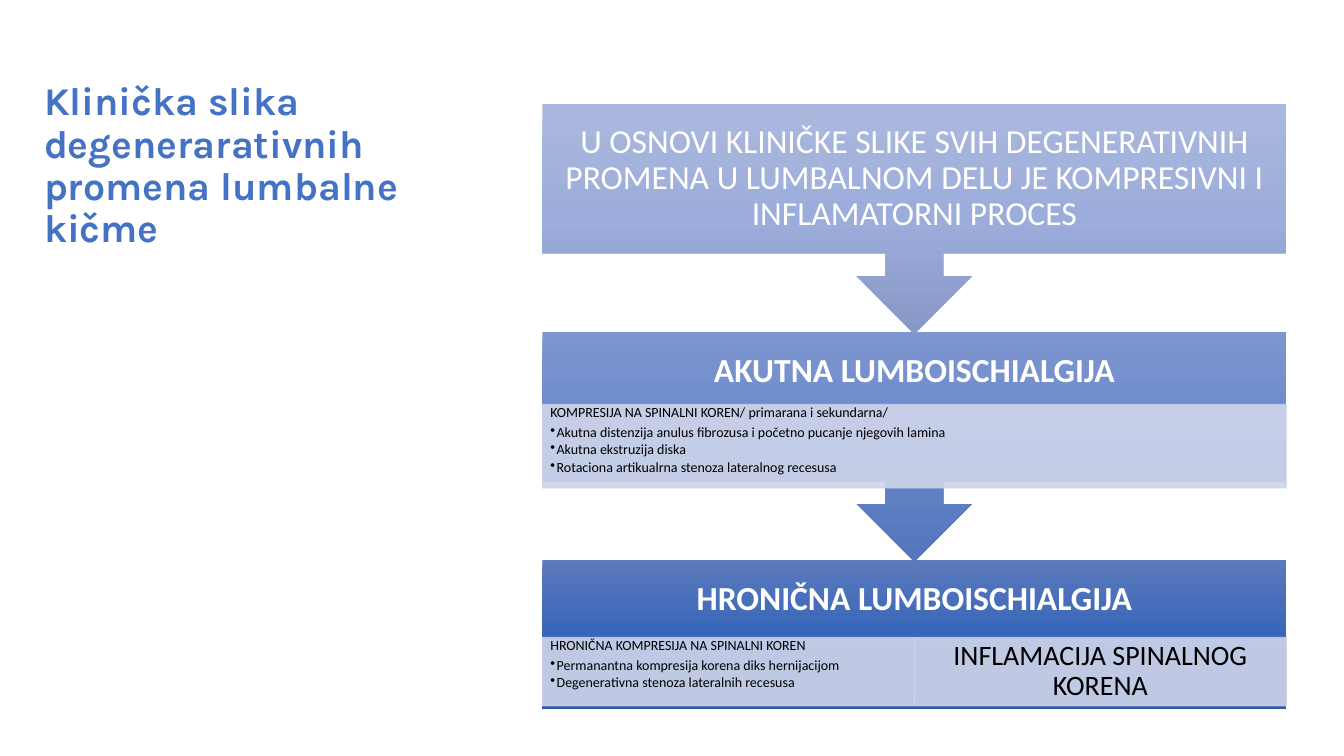
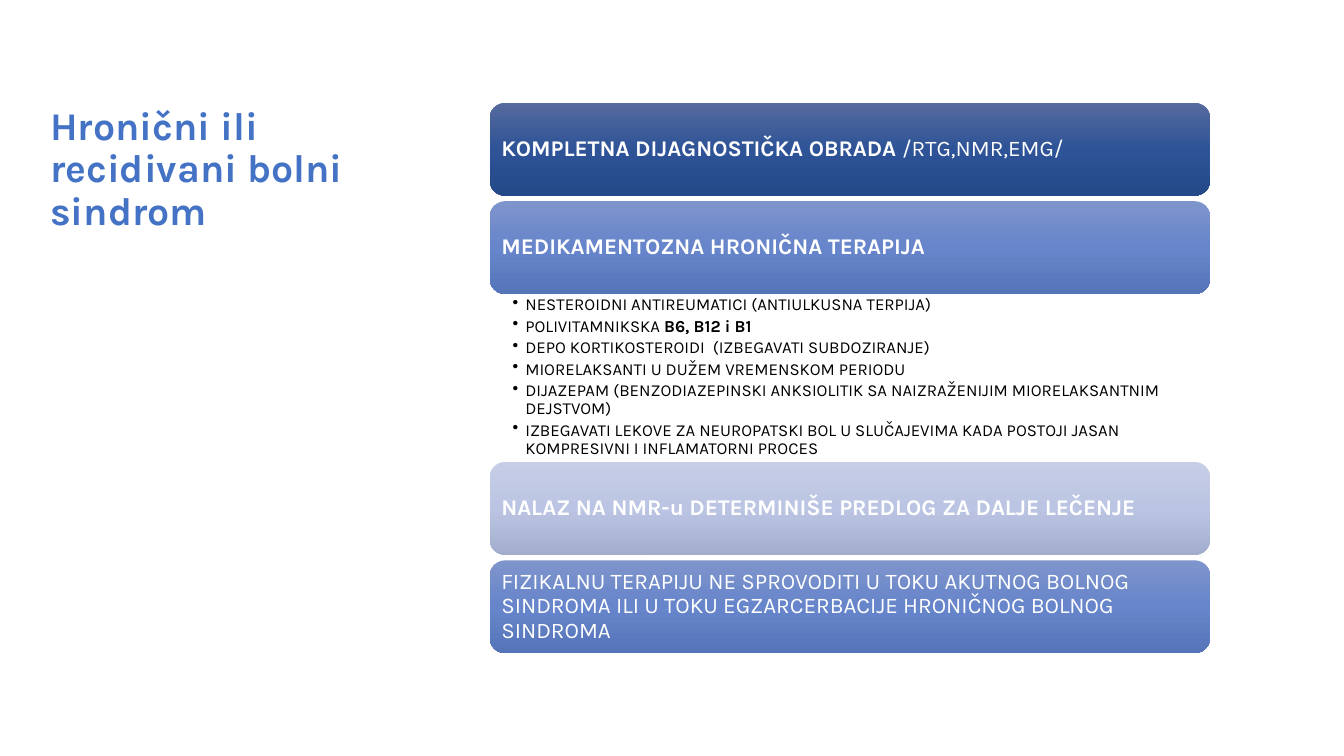
"""Builds two slides on lumbar pain: a flow of causes and a list of treatment steps."""
from copy import deepcopy
from dataclasses import dataclass

from pptx import Presentation
from pptx.dml.color import RGBColor as Rgb
from pptx.enum.shapes import MSO_SHAPE as Kind
from pptx.enum.text import MSO_ANCHOR as Anchor, PP_ALIGN as Align
from pptx.oxml.ns import qn
from pptx.oxml.xmlchemy import OxmlElement as Elem
from pptx.util import Cm, Pt


@dataclass(frozen=True)
class Theme:
    """Colours, fonts and type sizes that the slides share."""
    blue: str = "4472C4"
    white: str = "FFFFFF"
    black: str = "000000"
    band: str = "CFD5EA"
    pale: tuple = ("ABB8DD", "9CADDB", "8798C6")
    mid: tuple = ("7E96CE", "6787CC", "5676BB")
    deep: tuple = ("5C7ABD", "3866B8", "2D59A8")
    navy: tuple = ("566B9E", "2E5396", "244989")
    steel: tuple = ("7E94CC", "6785CA", "5674B8")
    mist: tuple = ("C6CEE6", "BBC5E3", "A3ADCD")
    sans: str = "Calibri"
    brand: str = "Karla"
    title: int = 28
    head: int = 24
    note: int = 20
    step: int = 16
    item: int = 12
    small: int = 10


T = Theme()


def bullet(para, hang):
    """Give a paragraph a hanging bullet."""
    props = para._p.get_or_add_pPr()
    props.set("marL", str(Cm(hang)))
    props.set("indent", str(-Cm(hang)))
    mark = Elem("a:buChar")
    mark.set("char", "•")
    props.append(mark)


def setup(frame, pad, anchor=Anchor.MIDDLE):
    """Set the wrap, anchor and insets (left, top, right, bottom) of a frame."""
    frame.word_wrap = True
    frame.vertical_anchor = anchor
    (frame.margin_left, frame.margin_top,
     frame.margin_right, frame.margin_bottom) = map(Cm, pad)


def write(frame, text, size, face, color, bold=None, align=Align.LEFT, after=0, hang=0):
    """Add a paragraph, with parts between asterisks in bold."""
    para = frame.paragraphs[0]
    if para.runs:
        para = frame.add_paragraph()
    para.alignment = align
    para.line_spacing = 0.9
    para.space_after = Pt(after)
    if hang:
        bullet(para, hang)
    font = para.font
    font.size, font.name, font.bold = Pt(size), face, bold
    font.color.rgb = Rgb.from_string(color)
    for num, part in enumerate(text.split("*")):
        if part:
            run = para.add_run()
            run.text = part
            if num % 2:
                run.font.bold = True


def label(slide, box, pad, anchor=Anchor.MIDDLE):
    """Add an empty text box and return its frame."""
    frame = slide.shapes.add_textbox(*map(Cm, box)).text_frame
    setup(frame, pad, anchor)
    return frame


def title(slide, text, box):
    """Add the slide title."""
    frame = label(slide, box, (0.25, 0.13, 0.25, 0.13))
    write(frame, text, T.title, T.brand, T.blue, bold=True)


def block(slide, kind, box, tones, pad):
    """Add a shape with a downward gradient and return its frame."""
    shape = slide.shapes.add_shape(kind, *map(Cm, box))
    shape.shadow.inherit = False
    shape.line.fill.background()
    fill = shape.fill
    fill.gradient()
    fill.gradient_angle = 270
    first = next(shape._element.iter(qn("a:gs")))
    first.addnext(deepcopy(first))
    for stop, place, tone in zip(fill.gradient_stops, (0, 0.5, 1), tones):
        stop.position = place
        stop.color.rgb = Rgb.from_string(tone)
    setup(shape.text_frame, pad)
    return shape.text_frame


def panel(slide, box, pad, anchor):
    """Add a slightly clear band and return its frame."""
    shape = slide.shapes.add_shape(Kind.RECTANGLE, *map(Cm, box))
    shape.shadow.inherit = False
    shape.fill.solid()
    shape.line.width = Pt(0.5)
    for color in (shape.fill.fore_color, shape.line.color):
        color.rgb = Rgb.from_string(T.band)
    for tone in shape._element.spPr.iter(qn("a:srgbClr")):
        alpha = Elem("a:alpha")
        alpha.set("val", "90000")
        tone.append(alpha)
    setup(shape.text_frame, pad, anchor)
    return shape.text_frame


def detail(slide, box, head, items):
    """Add a band with a heading and bulleted items."""
    frame = panel(slide, box, (0.2, 0.03, 0.2, 0.03), Anchor.TOP)
    write(frame, head, T.small, T.sans, T.black, after=3.5)
    for item in items:
        write(frame, item, T.small, T.sans, T.black, after=1.5, hang=0.16)


def causes(slide):
    """Draw the flow from the basic process to the chronic state."""
    title(slide, "Klinička slika degenerarativnih promena lumbalne kičme",
          (0.86, 1.37, 11.28, 5.66))
    left, top, wide, pitch = 13.67, 2.62, 18.75, 5.74
    tall, body, strip, pad = 5.79, 3.76, 2.03, 0.48
    arrow = Kind.DOWN_ARROW_CALLOUT
    stages = (
        (arrow, tall, body, T.pale, None,
         "U OSNOVI KLINIČKE SLIKE SVIH DEGENERATIVNIH PROMENA U LUMBALNOM DELU "
         "JE KOMPRESIVNI I INFLAMATORNI PROCES"),
        (arrow, tall, strip, T.mid, True, "AKUTNA LUMBOISCHIALGIJA"),
        (Kind.RECTANGLE, body, strip, T.deep, True, "HRONIČNA LUMBOISCHIALGIJA"),
    )
    for num, (kind, high, room, tones, bold, text) in reversed(list(enumerate(stages))):
        frame = block(slide, kind, (left, top + num * pitch, wide, high), tones,
                      (pad, pad, pad, pad + body - room))
        write(frame, text, T.head, T.sans, T.white, bold, Align.CENTER)
    detail(slide, (left, 10.19, wide, 2.11),
           "KOMPRESIJA NA SPINALNI KOREN/ primarana i sekundarna/",
           ("Akutna distenzija anulus fibrozusa i početno pucanje njegovih lamina",
            "Akutna ekstruzija diska",
            "Rotaciona artikualrna stenoza lateralnog recesusa"))
    half, low, high = wide / 2, 16.06, 1.73
    detail(slide, (left, low, half, high), "HRONIČNA KOMPRESIJA NA SPINALNI KOREN",
           ("Permanantna kompresija korena diks hernijacijom",
            "Degenerativna stenoza lateralnih recesusa"))
    frame = panel(slide, (left + half, low, half, high), (0.41, 0.08, 0.41, 0.08),
                  Anchor.MIDDLE)
    write(frame, "INFLAMACIJA SPINALNOG KORENA", T.note, T.sans, T.black,
          align=Align.CENTER)


def therapy(slide):
    """Draw the stack of treatment steps with the list of drugs."""
    title(slide, "Hronični ili recidivani bolni sindrom", (1.02, 1.57, 9.04, 5.44))
    left, top, wide, high, gap, room = 12.34, 2.59, 18.16, 2.34, 0.14, 4.23
    drugs = (
        "NESTEROIDNI ANTIREUMATICI (ANTIULKUSNA TERPIJA)",
        "POLIVITAMNIKSKA *B6, B12 i B1*",
        "DEPO KORTIKOSTEROIDI  (IZBEGAVATI SUBDOZIRANJE)",
        "MIORELAKSANTI U DUŽEM VREMENSKOM PERIODU",
        "DIJAZEPAM (BENZODIAZEPINSKI ANKSIOLITIK SA NAIZRAŽENIJIM "
        "MIORELAKSANTNIM DEJSTVOM)",
        "IZBEGAVATI LEKOVE ZA NEUROPATSKI BOL U SLUČAJEVIMA KADA POSTOJI JASAN "
        "KOMPRESIVNI I INFLAMATORNI PROCES",
    )
    steps = (
        (T.navy, None, "*KOMPLETNA DIJAGNOSTIČKA OBRADA */RTG,NMR,EMG/", ()),
        (T.steel, True, "MEDIKAMENTOZNA HRONIČNA TERAPIJA", drugs),
        (T.mist, True, "NALAZ NA NMR-u DETERMINIŠE PREDLOG ZA DALJE LEČENJE", ()),
        (T.steel, None,
         "FIZIKALNU TERAPIJU NE SPROVODITI U TOKU AKUTNOG BOLNOG SINDROMA ILI U TOKU "
         "EGZARCERBACIJE HRONIČNOG BOLNOG SINDROMA", ()),
    )
    for tones, bold, text, items in steps:
        frame = block(slide, Kind.ROUNDED_RECTANGLE, (left, top, wide, high), tones,
                      (0.18,) * 4)
        write(frame, text, T.step, T.brand, T.white, bold)
        top += high
        if items:
            frame = label(slide, (left, top, wide, room), (0.58, 0.05, 0.3, 0.05),
                          Anchor.TOP)
            for item in items:
                write(frame, item, T.item, T.brand, T.black, after=2.4, hang=0.32)
        top += room if items else gap


def main():
    """Build and save the deck."""
    deck = Presentation()
    deck.slide_width, deck.slide_height = Cm(33.87), Cm(19.05)
    for draw in (causes, therapy):
        draw(deck.slides.add_slide(deck.slide_layouts[6]))
    deck.save("out.pptx")


if __name__ == "__main__":
    main()
